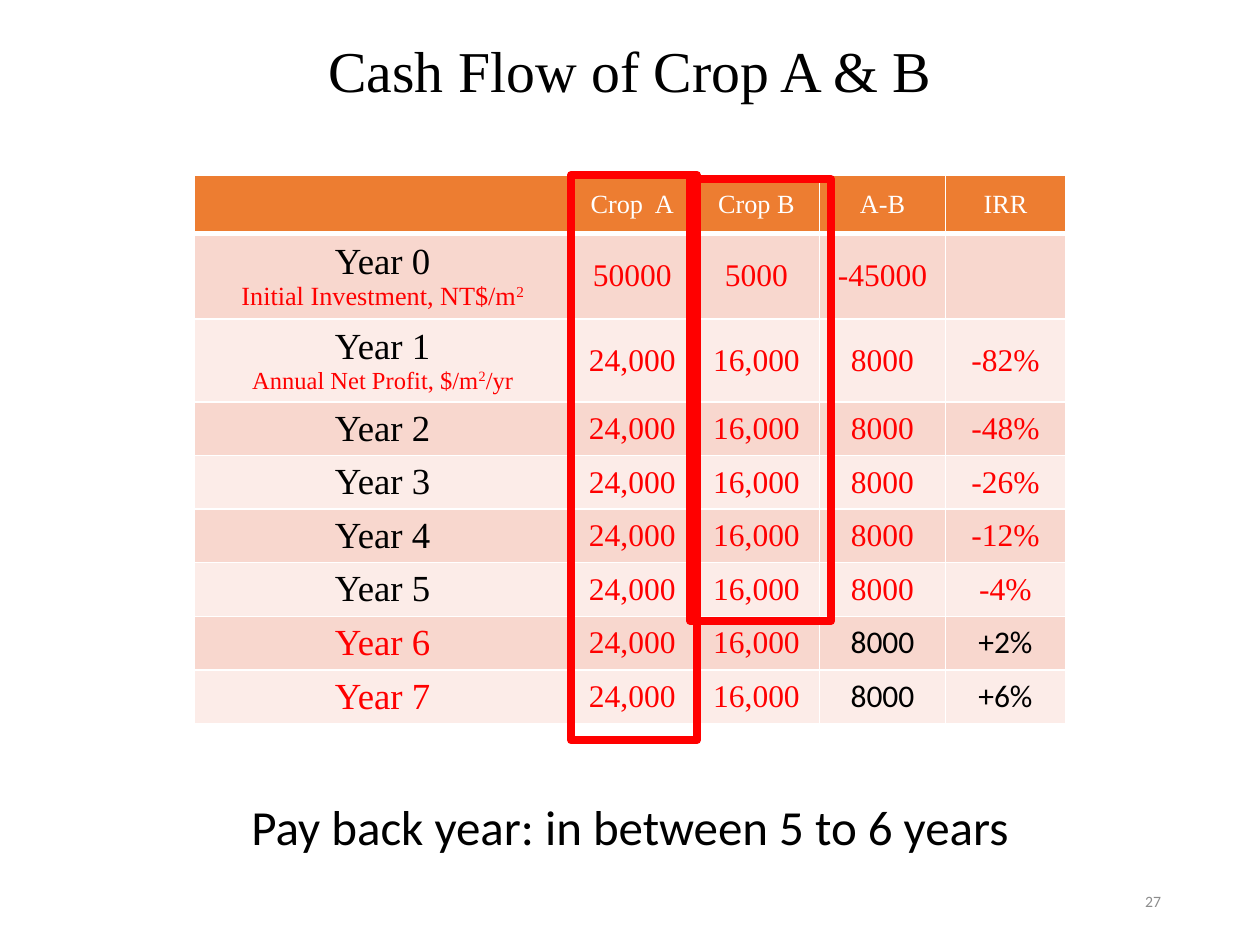
from dataclasses import dataclass

from lxml import etree
from pptx import Presentation
from pptx import util as u
from pptx.dml import color
from pptx.enum import shapes, text
from pptx.oxml import ns

SERIF, SANS = "Times New Roman", "Calibri"
RED, BLACK, WHITE, ORANGE = "FF0000", "000000", "FFFFFF", "ED7D31"
BANDS = ("F8D7CE", "FCECE8")
MID = text.MSO_ANCHOR.MIDDLE
CENTER, RIGHT = text.PP_ALIGN.CENTER, text.PP_ALIGN.RIGHT


@dataclass
class Style:
    size: float
    face: str = SERIF
    ink: str = RED


@dataclass
class Box:
    left: float
    top: float
    width: float
    height: float

    def spot(self) -> tuple:
        return tuple(u.Pt(n) for n in (self.left, self.top, self.width, self.height))


@dataclass
class Year:
    name: str
    cells: tuple
    note: str = ""
    size: float = 15
    paid: bool = False


HEAD = ("", "Crop  A", "Crop B", "A-B", "IRR")
FLOW = ("24,000", "16,000", "8000")
YEARS = [
    Year("Year 0", ("50000", "5000", "-45000", ""), "Initial Investment, NT$/m^2"),
    Year("Year 1", FLOW + ("-82%",), "Annual Net Profit, $/m^2^/yr", 14),
    Year("Year 2", FLOW + ("-48%",)),
    Year("Year 3", FLOW + ("-26%",)),
    Year("Year 4", FLOW + ("-12%",)),
    Year("Year 5", FLOW + ("-4%",)),
    Year("Year 6", FLOW + ("+2%",), paid=True),
    Year("Year 7", FLOW + ("+6%",), paid=True),
]
COLS = (215.3, 70, 72, 72, 68.5)
ROWS = (33.5, 48.8, 44.5) + (30.6,) * 6


def rgb(code: str) -> color.RGBColor:
    return color.RGBColor.from_string(code)


def write(para, words: str, style: Style, align=CENTER) -> None:
    """Fill a paragraph; parts between ^ marks are raised."""
    para.alignment = align
    for i, part in enumerate(words.split("^")):
        run = para.add_run()
        run.text = part
        if i % 2:
            run._r.get_or_add_rPr().set("baseline", "30000")
    font = para.font
    font.size, font.name = u.Pt(style.size), style.face
    font.color.rgb = rgb(style.ink)


def label(slide, box: Box, words: str, style: Style, align=CENTER, anchor=MID):
    frame = slide.shapes.add_textbox(*box.spot()).text_frame
    frame.word_wrap = True
    frame.vertical_anchor = anchor
    write(frame.paragraphs[0], words, style, align)
    return frame


def edge(cell, base: float) -> None:
    """Draw white borders; base is the width of the bottom one."""
    props = cell._tc.get_or_add_tcPr()
    for i, (side, width) in enumerate((("L", 1), ("R", 1), ("T", 1), ("B", base))):
        line = etree.Element(ns.qn(f"a:ln{side}"), w=str(u.Pt(width)))
        fill = etree.SubElement(line, ns.qn("a:solidFill"))
        etree.SubElement(fill, ns.qn("a:srgbClr"), val=WHITE)
        props.insert(i, line)


def fill_cell(cell, tint: str, lines: list, base: float = 1) -> None:
    cell.fill.solid()
    cell.fill.fore_color.rgb = rgb(tint)
    cell.vertical_anchor = MID
    cell.margin_left = cell.margin_right = u.Pt(5.4)
    cell.margin_top = cell.margin_bottom = u.Pt(2.7)
    edge(cell, base)
    frame = cell.text_frame
    for i, (words, style) in enumerate(lines):
        para = frame.add_paragraph() if i else frame.paragraphs[0]
        if words:
            write(para, words, style)


def draw_table(slide) -> None:
    box = Box(111, 100, sum(COLS), sum(ROWS))
    grid = slide.shapes.add_table(len(ROWS), len(COLS), *box.spot()).table
    for col, width in zip(grid.columns, COLS):
        col.width = u.Pt(width)
    for row, height in zip(grid.rows, ROWS):
        row.height = u.Pt(height)

    # Header row
    for c, words in enumerate(HEAD):
        fill_cell(grid.cell(0, c), ORANGE, [(words, Style(15, ink=WHITE))], 3)

    # Year rows
    for r, year in enumerate(YEARS, 1):
        tint = BANDS[(r - 1) % 2]
        lines = [(year.name, Style(21, ink=RED if year.paid else BLACK))]
        if year.note:
            lines.append((year.note, Style(year.size)))
        fill_cell(grid.cell(r, 0), tint, lines)
        for c, words in enumerate(year.cells, 1):
            plain = year.paid and c > 2
            style = Style(18, SANS, BLACK) if plain else Style(18)
            fill_cell(grid.cell(r, c), tint, [(words, style)])


def frame_crop(slide, box: Box) -> None:
    rect = slide.shapes.add_shape(shapes.MSO_SHAPE.RECTANGLE, *box.spot())
    rect.shadow.inherit = False
    rect.fill.background()
    rect.line.color.rgb = rgb(RED)
    rect.line.width = u.Pt(4.5)


def main() -> None:
    deck = Presentation()
    deck.slide_width, deck.slide_height = u.Pt(720), u.Pt(540)
    slide = deck.slides.add_slide(deck.slide_layouts[6])

    # Title and page number
    title = label(slide, Box(49.5, 3, 621, 78.5), "Cash Flow of Crop A & B",
                  Style(33, ink=BLACK))
    title.paragraphs[0].line_spacing = 0.9
    label(slide, Box(508.5, 500.5, 162, 28.75), "27", Style(9, SANS, "8C8C8C"), RIGHT)

    # Cash flow table with both crops framed
    draw_table(slide)
    for box in (Box(326.3, 100, 72, 323), Box(394.5, 102.4, 80.5, 252.5)):
        frame_crop(slide, box)

    # Conclusion
    label(slide, Box(111, 451.5, 498, 41), "Pay back year: in between 5 to 6 years",
          Style(28, SANS, BLACK), anchor=text.MSO_ANCHOR.TOP)

    deck.save("out.pptx")


if __name__ == "__main__":
    main()
